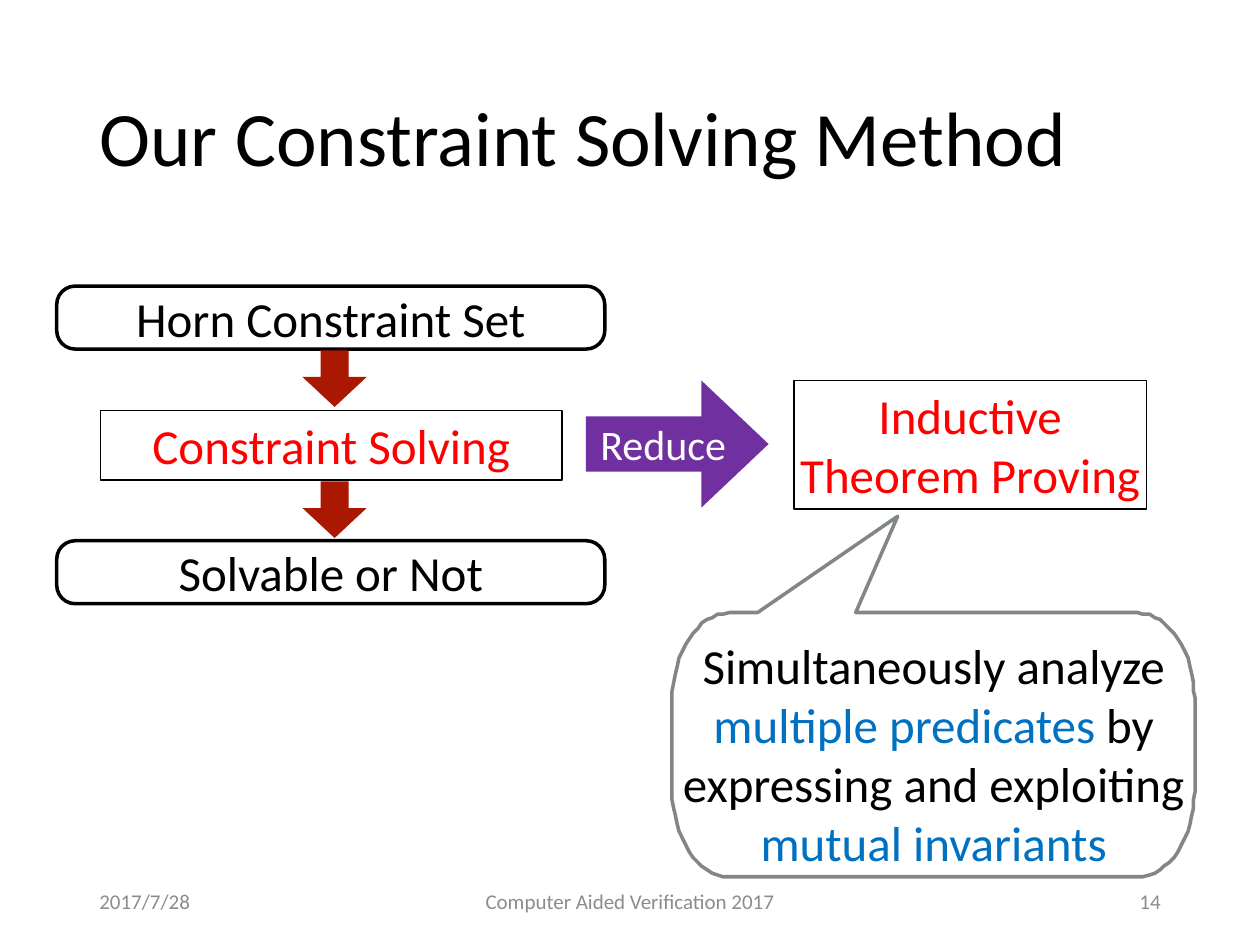
"""Builds the slide on reducing constraint solving to inductive theorem proving."""
import math

from pptx import Presentation, util as u
from pptx.dml.color import RGBColor
from pptx.enum import shapes, text

THEME = {
    "font": "Calibri",
    "black": "000000", "white": "FFFFFF", "red": "FF0000", "blue": "0070C0",
    "purple": "7030A0", "brick": "AB1802", "slate": "808785", "gray": "8C8C8C",
    "title": 44, "body": 28, "label": 24, "footer": 12,
}
SHAPE = shapes.MSO_SHAPE
ALIGN = text.PP_ALIGN
INSET = 2.6
ARROW_ADJ = (0.435, 0.529)

TITLE = ("Our Constraint Solving Method", (49.7, 28.8, 620.6, 104.4))
FOOTERS = [
    ("2017/7/28", 49.7, 162, ALIGN.LEFT),
    ("Computer Aided Verification 2017", 238.3, 243.4, ALIGN.CENTER),
    ("14", 508.3, 162, ALIGN.RIGHT),
]
FOOTER_TOP, FOOTER_HEIGHT = 500.4, 28.8
STATES = [("Horn Constraint Set", 163.5), ("Solvable or Not", 309)]
STATE_LEFT, STATE_WIDTH, STATE_HEIGHT = 32.4, 313.2, 36
METHODS = [
    ("Constraint Solving", (57.4, 234.5, 263.8, 39.6)),
    ("Inductive Theorem Proving", (453.6, 217.4, 201.6, 73.4)),
]
STEP_TOPS = (198, 272.9)
STEP_LEFT, STEP_LENGTH, STEP_BREADTH = 175, 32.4, 36.7
REDUCE = ("Reduce", (334.8, 217.4, 104.4, 72.7))
BALLOON = {"left": 384.2, "top": 350.4, "right": 682.6, "bottom": 501.2,
           "rx": 32.4, "ry": 49, "tip": (513.4, 295.2), "base": (432.7, 488.9)}
BALLOON_TEXT = [
    ("Simultaneously analyze ", "black"),
    ("multiple predicates ", "blue"),
    ("by expressing and exploiting ", "black"),
    ("mutual invariants", "blue"),
]


def pts(values):
    return [u.Pt(v) for v in values]


def color(name):
    return RGBColor.from_string(THEME[name])


def write(sp, runs, size, align=ALIGN.CENTER, insets=(INSET,) * 4):
    tf = sp.text_frame
    tf.word_wrap = True
    tf.vertical_anchor = text.MSO_ANCHOR.MIDDLE
    tf.margin_left, tf.margin_top, tf.margin_right, tf.margin_bottom = pts(insets)
    p = tf.paragraphs[0]
    p.alignment = align
    for words, ink in runs:
        r = p.add_run()
        r.text = words
        r.font.name = THEME["font"]
        r.font.size = u.Pt(THEME[size])
        r.font.color.rgb = color(ink)
    return p


def paint(sp, fill, line=None, width=1):
    sp.shadow.inherit = False
    sp.fill.solid()
    sp.fill.fore_color.rgb = color(fill)
    if line:
        sp.line.color.rgb = color(line)
        sp.line.width = u.Pt(width)
    else:
        sp.line.fill.background()


def add_preset(s, kind, box, fill, line=None, width=1, adjust=()):
    sp = s.shapes.add_shape(kind, *pts(box))
    paint(sp, fill, line, width)
    for i, value in enumerate(adjust):
        sp.adjustments[i] = value
    return sp


def balloon_outline(b, steps=16):
    cx = (b["left"] + b["rx"], b["right"] - b["rx"])
    cy = (b["top"] + b["ry"], b["bottom"] - b["ry"])
    corners = [(cx[1], cy[0], 270), (cx[1], cy[1], 0),
               (cx[0], cy[1], 90), (cx[0], cy[0], 180)]
    points = [b["tip"], (b["base"][1], b["top"])]
    for x, y, start in corners:
        for i in range(steps + 1):
            a = math.radians(start + 90 * i / steps)
            points.append((x + b["rx"] * math.cos(a), y + b["ry"] * math.sin(a)))
    return points + [(b["base"][0], b["top"])]


def add_balloon(s):
    start, *rest = balloon_outline(BALLOON)
    fb = s.shapes.build_freeform(*start, scale=u.Pt(1))
    fb.add_line_segments(rest, close=True)
    sp = fb.convert_to_shape()
    paint(sp, "white", "slate", 2)
    write(sp, BALLOON_TEXT, "body", insets=(INSET, 67.7, INSET, INSET))


def main():
    prs = Presentation()
    prs.slide_width, prs.slide_height = pts((720, 540))
    s = prs.slides.add_slide(prs.slide_layouts[5])

    words, box = TITLE
    title = s.shapes.title
    title.left, title.top, title.width, title.height = pts(box)
    p = write(title, [(words, "black")], "title", ALIGN.LEFT, (7.2, 3.6, 7.2, 3.6))
    p.line_spacing = 0.9

    for words, left, width, align in FOOTERS:
        sp = s.shapes.add_textbox(*pts((left, FOOTER_TOP, width, FOOTER_HEIGHT)))
        write(sp, [(words, "gray")], "footer", align, (7.2, 3.6, 7.2, 3.6))

    for words, top in STATES:
        sp = add_preset(s, SHAPE.ROUNDED_RECTANGLE,
                        (STATE_LEFT, top, STATE_WIDTH, STATE_HEIGHT),
                        "white", "black", 2, (0.294,))
        write(sp, [(words, "black")], "body")

    for words, box in METHODS:
        sp = add_preset(s, SHAPE.RECTANGLE, box, "white", "black")
        write(sp, [(words, "red")], "body")

    for top in STEP_TOPS:
        sp = add_preset(s, SHAPE.RIGHT_ARROW,
                        (STEP_LEFT, top, STEP_LENGTH, STEP_BREADTH),
                        "brick", adjust=ARROW_ADJ)
        sp.rotation = 90

    add_balloon(s)

    words, box = REDUCE
    sp = add_preset(s, SHAPE.RIGHT_ARROW, box, "purple", adjust=ARROW_ADJ)
    write(sp, [(words, "white")], "label", ALIGN.LEFT, (8.3, INSET, INSET, INSET))

    prs.save("out.pptx")


if __name__ == "__main__":
    main()
